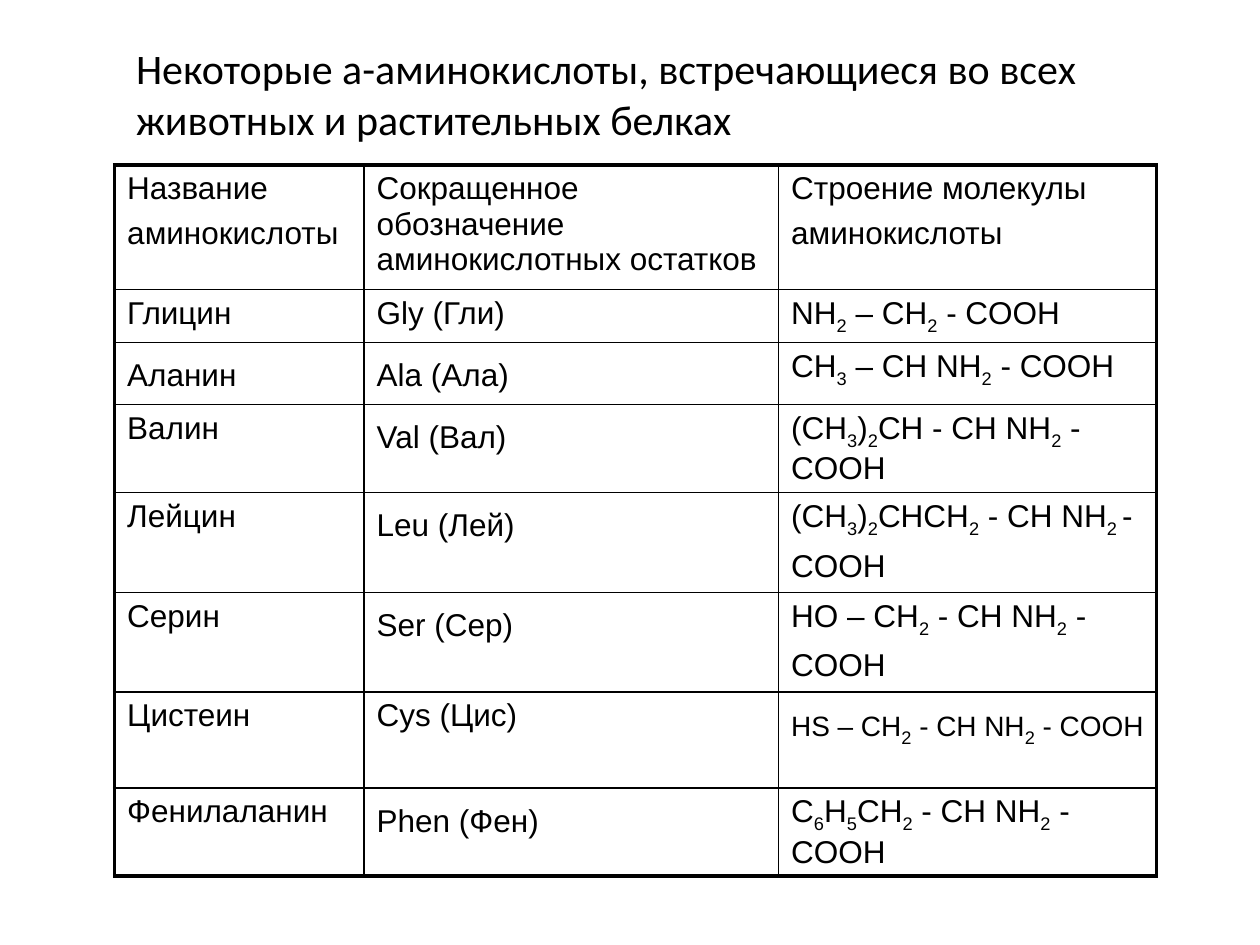
"""Build a slide with a table of common amino acids."""
from lxml import etree
from pptx import Presentation
from pptx.dml.color import RGBColor
from pptx.enum.text import MSO_ANCHOR, PP_ALIGN
from pptx.oxml.ns import qn
from pptx.util import Inches, Pt

TOP, LEFT = MSO_ANCHOR.TOP, PP_ALIGN.LEFT
INK = "000000"
THICK, THIN = 2.25, 1
TITLE = "Некоторые а-аминокислоты, встречающиеся во всех животных и растительных белках"
WIDTHS = [1.98, 3.29, 3]
HEIGHTS = [0.99, 0.39, 0.49, 0.69, 0.79, 0.79, 0.76, 0.69]
ROWS = [
    ("Название аминокислоты ", "Сокращенное обозначение аминокислотных остатков",
     "Строение молекулы аминокислоты "),
    ("Глицин", "Gly (Гли)", "NH|2| – CH|2| - COOH"),
    ("Аланин ", "Ala (Ала) ", "CH|3| – CH NH|2| - COOH"),
    ("Валин", "Val (Вал) ", "(CH|3|)|2|CH - CH NH|2| - COOH"),
    ("Лейцин", "Leu (Лей) ", "(CH|3|)|2|CHCH|2| - CH NH|2 |- COOH "),
    ("Серин", "Ser (Сер) ", "HO – CH|2| - CH NH|2| - COOH "),
    ("Цистеин", "Cys (Цис)", "HS – CH|2| - CH NH|2| - COOH "),
    ("Фенилаланин", "Phen (Фен) ", "C|6|H|5|CH|2| - CH NH|2| - COOH"),
]
SMALL = {(6, 2): 16}


def paint(font, color):
    font.color.rgb = RGBColor.from_string(color)


def write(cell, text, size):
    """Write text whose subscripts stand between bars, with a tall final space."""
    para = cell.text_frame.paragraphs[0]
    para.alignment = LEFT
    para.font.name = "Arial"
    paint(para.font, INK)
    parts = [(part, 18 if i % 2 else size, i % 2)
             for i, part in enumerate(text.rstrip().split("|"))]
    if text.endswith(" "):
        parts.append((" ", 24, 0))
    for part, points, sub in parts:
        run = para.add_run()
        run.text = part
        run.font.size = Pt(points)
        if sub:
            run.font._element.set("baseline", "-25000")


def frame(cell, sides):
    """Draw the four borders of a cell, given as side and points."""
    cell.fill.background()
    props = cell._tc.get_or_add_tcPr()
    for i, (side, points) in enumerate(sides):
        line = etree.Element(qn(f"a:ln{side}"), w=str(Pt(points)))
        fill = etree.SubElement(line, qn("a:solidFill"))
        etree.SubElement(fill, qn("a:srgbClr"), val=INK)
        props.insert(i, line)


def add_title(slide):
    """Place the heading."""
    title = slide.shapes.title
    title.left, title.top = Inches(0.98), Inches(0.29)
    title.width, title.height = Inches(7.8), Inches(0.91)
    box = title.text_frame
    box.text = TITLE
    box.word_wrap = True
    box.vertical_anchor = TOP
    para = box.paragraphs[0]
    para.alignment = LEFT
    para.line_spacing = 1.0
    para.space_before = Pt(0)
    para.font.name = "Calibri"
    para.font.size = Pt(24)
    paint(para.font, INK)


def add_grid(slide):
    """Place the table of amino acids."""
    rows, cols = len(ROWS), len(WIDTHS)
    grid = slide.shapes.add_table(
        rows, cols, Inches(0.91), Inches(1.31),
        Inches(sum(WIDTHS)), Inches(sum(HEIGHTS))).table
    grid.first_row = grid.horz_banding = False
    for col, width in zip(grid.columns, WIDTHS):
        col.width = Inches(width)
    for r, (height, texts) in enumerate(zip(HEIGHTS, ROWS)):
        grid.rows[r].height = Inches(height)
        for c, text in enumerate(texts):
            cell = grid.cell(r, c)
            cell.vertical_anchor = TOP
            write(cell, text, SMALL.get((r, c), 18))
            edges = [("L", c == 0), ("R", c == cols - 1),
                     ("T", r == 0), ("B", r == rows - 1)]
            frame(cell, [(side, THICK if outer else THIN) for side, outer in edges])


def main():
    """Build and save the slide."""
    deck = Presentation()
    deck.slide_width, deck.slide_height = Inches(10), Inches(7.5)
    slide = deck.slides.add_slide(deck.slide_layouts[5])
    add_title(slide)
    add_grid(slide)
    deck.save("out.pptx")


if __name__ == "__main__":
    main()
